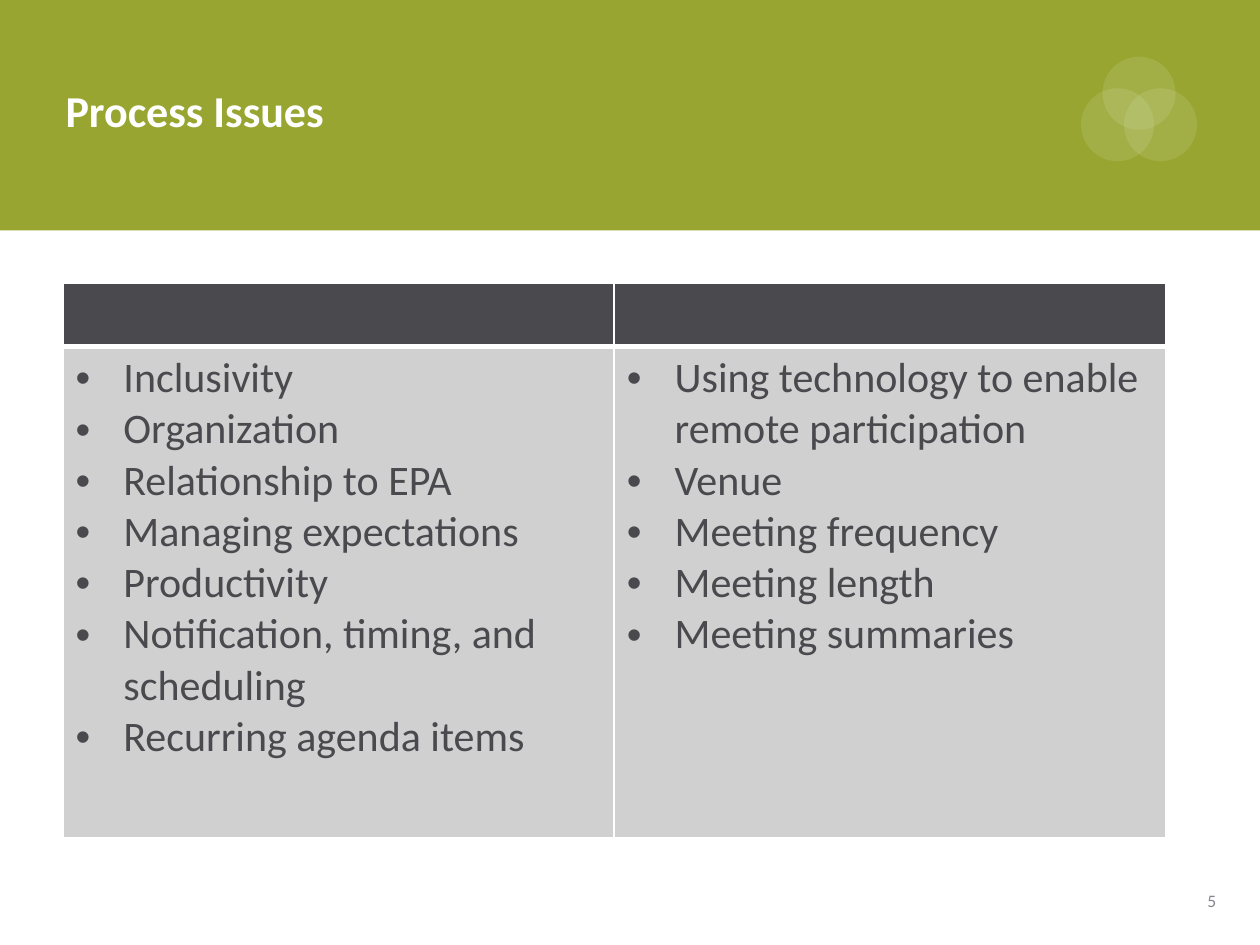
from lxml.etree import SubElement
from pptx import Presentation
from pptx.dml.color import RGBColor
from pptx.enum.shapes import MSO_SHAPE
from pptx.enum.text import MSO_ANCHOR, PP_ALIGN
from pptx.oxml.ns import qn
from pptx.util import Inches, Pt

TITLE = "Process Issues"
PAGE_NUMBER = "5"
ISSUE_COLUMNS = [
    ["Inclusivity", "Organization", "Relationship to EPA", "Managing expectations",
     "Productivity", "Notification, timing, and scheduling", "Recurring agenda items"],
    ["Using technology to enable remote participation", "Venue", "Meeting frequency",
     "Meeting length", "Meeting summaries"],
]
COLORS = {"green": "98A631", "white": "FFFFFF", "dark": "49494E", "cell": "D0D0D0", "number": "86868E"}
CIRCLES = [(8.58, 0.7), (8.92, 0.7), (8.75, 0.45)]
ROW_HEIGHTS = [0.5, 3.9]
COLUMN_WIDTH = 4.375
FORMATS = {
    "title": {"size": Pt(25.2), "bold": True, "color": "white"},
    "issue": {"size": Pt(24), "bold": False, "color": "dark"},
    "number": {"size": Pt(10), "bold": False, "color": "number"},
}


def color(name):
    """Return a named colour."""
    return RGBColor.from_string(COLORS[name])


def format_font(font, name):
    """Apply a named text format."""
    font.name = "Calibri"
    for key, value in FORMATS[name].items():
        if key == "color":
            font.color.rgb = color(value)
        else:
            setattr(font, key, value)


def add_filled_shape(slide, kind, box, fill, opacity=100):
    """Add a plain shape without line or shadow."""
    shape = slide.shapes.add_shape(kind, *map(Inches, box))
    shape.shadow.inherit = False
    shape.line.fill.background()
    shape.fill.solid()
    shape.fill.fore_color.rgb = color(fill)
    if opacity < 100:
        rgb = shape.fill._xPr.find(qn("a:solidFill"))[0]
        SubElement(rgb, qn("a:alpha"), val=str(opacity * 1000))


def write_line(frame, text, format_name, alignment):
    """Write one line into a text frame, centred vertically."""
    frame.word_wrap = True
    frame.vertical_anchor = MSO_ANCHOR.MIDDLE
    frame.text = text
    paragraph = frame.paragraphs[0]
    paragraph.alignment = alignment
    format_font(paragraph.runs[0].font, format_name)


def style_cell(cell, fill, top, bottom):
    """Give a cell white borders and a solid fill."""
    properties = cell._tc.get_or_add_tcPr()
    for side, width in {"L": 1, "R": 1, "T": top, "B": bottom}.items():
        line = SubElement(properties, qn(f"a:ln{side}"), w=str(Pt(width)))
        SubElement(SubElement(line, qn("a:solidFill")), qn("a:srgbClr"), val=COLORS["white"])
    cell.fill.solid()
    cell.fill.fore_color.rgb = color(fill)


def add_bullets(frame, issues):
    """Fill a text frame with bulleted issues."""
    for index, issue in enumerate(issues):
        paragraph = frame.add_paragraph() if index else frame.paragraphs[0]
        properties = paragraph._p.get_or_add_pPr()
        properties.set("marL", str(Inches(0.38)))
        properties.set("indent", str(Inches(-0.38)))
        SubElement(properties, qn("a:buFont"), typeface="Arial")
        SubElement(properties, qn("a:buChar"), char="•")
        run = paragraph.add_run()
        run.text = issue
        format_font(run.font, "issue")


def add_issue_table(slide):
    """Add the table with an empty header row above the issues."""
    count = len(ISSUE_COLUMNS)
    box = (0.5, 2.25, COLUMN_WIDTH * count, sum(ROW_HEIGHTS))
    table = slide.shapes.add_table(len(ROW_HEIGHTS), count, *map(Inches, box)).table
    for row, height in zip(table.rows, ROW_HEIGHTS):
        row.height = Inches(height)
    for index, issues in enumerate(ISSUE_COLUMNS):
        table.columns[index].width = Inches(COLUMN_WIDTH)
        style_cell(table.cell(0, index), "dark", 1, 3)
        style_cell(table.cell(1, index), "cell", 3, 1)
        add_bullets(table.cell(1, index).text_frame, issues)


def main():
    """Build and save the slide."""
    presentation = Presentation()
    presentation.slide_width, presentation.slide_height = Inches(10), Inches(7.5)
    slide = presentation.slides.add_slide(presentation.slide_layouts[5])
    add_filled_shape(slide, MSO_SHAPE.RECTANGLE, (0, 0, 10, 1.83), "green")
    for left, top in CIRCLES:
        add_filled_shape(slide, MSO_SHAPE.OVAL, (left, top, 0.58, 0.58), "white", 10)

    title = slide.shapes.title
    title.left, title.top, title.width, title.height = map(Inches, (0.42, 0.61, 7.67, 0.53))
    write_line(title.text_frame, TITLE, "title", PP_ALIGN.LEFT)
    slide.shapes._spTree.append(title._element)

    add_issue_table(slide)
    number = slide.shapes.add_textbox(*map(Inches, (5.67, 6.95, 4.08, 0.4)))
    write_line(number.text_frame, PAGE_NUMBER, "number", PP_ALIGN.RIGHT)
    presentation.save("out.pptx")


if __name__ == "__main__":
    main()
